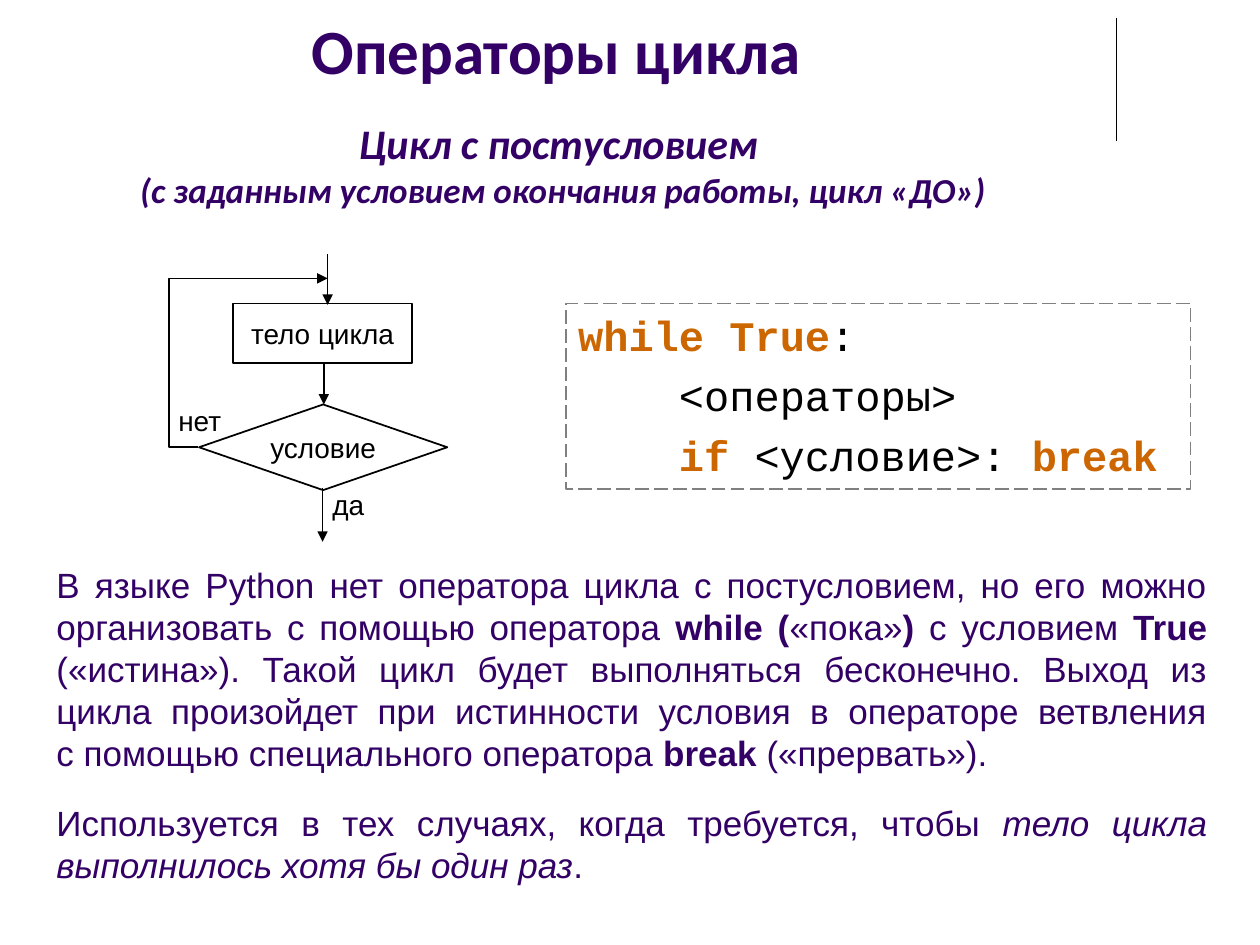
from lxml.etree import SubElement
from pptx import Presentation
from pptx.dml.color import RGBColor
from pptx.enum.dml import MSO_LINE
from pptx.enum.shapes import MSO_CONNECTOR, MSO_SHAPE
from pptx.enum.text import MSO_ANCHOR, PP_ALIGN
from pptx.oxml.ns import qn
from pptx.util import Inches, Pt

PURPLE = RGBColor(0x33, 0x00, 0x66)
ORANGE = RGBColor(0xCC, 0x66, 0x00)
GRAY = RGBColor(0x80, 0x80, 0x80)
BLACK = RGBColor(0, 0, 0)
WHITE = RGBColor(0xFF, 0xFF, 0xFF)

# A paragraph is a list of (text, format) spans.
BOLD, ITALIC = {"bold": True}, {"italic": True}
KEYWORD = {"bold": True, "color": ORANGE}

TITLE = [
    [("Операторы цикла ", {"size": 36})],
    [("Цикл с постусловием ", {"size": 24, "italic": True})],
    [("(с заданным условием окончания работы, цикл «ДО»)", {"size": 20, "italic": True})],
]
CODE = [
    [("while True", KEYWORD), (":", {})],
    [("    <операторы>", {})],
    [("    ", {}), ("if", KEYWORD), (" <условие>: ", {}), ("break", KEYWORD)],
]
EXPLANATION = [[
    ("В языке Python нет оператора цикла с постусловием, но его можно "
     "организовать с помощью оператора ", {}),
    ("while (", BOLD), ("«пока»", {}), (") ", BOLD), ("с условием ", {}), ("True", BOLD),
    (" («истина»). Такой цикл будет выполняться бесконечно. Выход из цикла "
     "произойдет при истинности условия в операторе ветвления\n"
     "с помощью специального оператора ", {}),
    ("break ", BOLD), ("(«прервать»).", {}),
]]
USAGE = [[
    ("Используется в тех случаях, когда требуется, чтобы ", {}),
    ("тело цикла выполнилось хотя бы один раз", ITALIC), (".", {}),
]]

# Flowchart: boxes as left, top, width, height; arrows as start and end points.
FLOW_BLOCKS = [
    ("условие", MSO_SHAPE.FLOWCHART_DECISION, (1.58, 3.21, 1.97, 0.68)),
    ("тело цикла", MSO_SHAPE.RECTANGLE, (1.85, 2.41, 1.42, 0.47)),
]
FLOW_LABELS = [("да", (2.48, 3.87, 0.57, 0.33)), ("нет", (1.3, 3.2, 0.57, 0.33))]
FLOW_ARROWS = [
    ((2.6, 2.02), (2.6, 2.42)),
    ((2.57, 2.88), (2.57, 3.21)),
    ((2.56, 3.87), (2.56, 4.3)),
]
LOOP_BACK = [(1.57, 3.55), (1.34, 3.55), (1.34, 2.21), (2.6, 2.21)]


def inches(values):
    return [Inches(value) for value in values]


def write(shape, paragraphs, *, font, size=None, color=BLACK, bold=False,
          align=PP_ALIGN.LEFT, anchor=MSO_ANCHOR.TOP, gaps=(), margins=(0.1, 0.05)):
    """Fill a shape with text; gaps are points before each paragraph after the first."""
    frame = shape.text_frame
    frame.word_wrap = True
    frame.vertical_anchor = anchor
    frame.margin_left = frame.margin_right = Inches(margins[0])
    frame.margin_top = frame.margin_bottom = Inches(margins[1])
    for index, spans in enumerate(paragraphs):
        para = frame.add_paragraph() if index else frame.paragraphs[0]
        para.alignment = align
        para.space_before = Pt(gaps[index - 1] if index else 0)
        for text, style in spans:
            for number, line in enumerate(text.split("\n")):
                if number:
                    para.add_line_break()
                span = para.add_run()
                span.text = line
                span.font.name = font
                span.font.size = Pt(style.get("size", size))
                span.font.bold = style.get("bold", bold)
                span.font.italic = style.get("italic", False)
                span.font.color.rgb = style.get("color", color)


def add_text(page, place, paragraphs, **text_format):
    write(page.shapes.add_textbox(*inches(place)), paragraphs, **text_format)


def outline(shape, color=BLACK, width=1, arrow=False):
    shape.line.color.rgb = color
    shape.line.width = Pt(width)
    if arrow:
        SubElement(shape.line._get_or_add_ln(), qn("a:tailEnd"), type="triangle")


def add_line(page, start, end, **line_format):
    line = page.shapes.add_connector(MSO_CONNECTOR.STRAIGHT, *inches(start + end))
    outline(line, **line_format)
    SubElement(line._element.spPr, qn("a:effectLst"))


def add_block(page, kind, place):
    block = page.shapes.add_shape(kind, *inches(place))
    block.shadow.inherit = False
    outline(block)
    block.fill.solid()
    block.fill.fore_color.rgb = WHITE
    return block


def add_flowchart(page):
    label_format = dict(font="Arial", size=16, align=PP_ALIGN.CENTER, margins=(0, 0))
    for text, kind, place in FLOW_BLOCKS:
        write(add_block(page, kind, place), [[(text, {})]],
              anchor=MSO_ANCHOR.MIDDLE, **label_format)
    for text, place in FLOW_LABELS:
        add_text(page, place, [[(text, {})]], **label_format)
    for start, end in FLOW_ARROWS:
        add_line(page, start, end, arrow=True)

    first, *others = [inches(point) for point in LOOP_BACK]
    builder = page.shapes.build_freeform(*first)
    builder.add_line_segments(others, close=False)
    loop = builder.convert_to_shape()
    loop.shadow.inherit = False
    loop.fill.background()
    outline(loop, arrow=True)


def main():
    deck = Presentation()
    deck.slide_width, deck.slide_height = inches((10, 7.5))
    page = deck.slides.add_slide(deck.slide_layouts[6])

    add_line(page, (8.86, 0.14), (8.86, 1.12), width=0.75)
    add_text(page, (0.12, 0, 8.7, 1.9), TITLE, font="Calibri", color=PURPLE, bold=True,
             align=PP_ALIGN.CENTER, gaps=(17.7, 0), margins=(0.1, 0.09))

    code_box = add_block(page, MSO_SHAPE.RECTANGLE, (4.49, 2.41, 4.96, 1.47))
    code_box.fill.background()
    outline(code_box, GRAY)
    code_box.line.dash_style = MSO_LINE.LONG_DASH
    write(code_box, CODE, font="Courier New", size=24, gaps=(5.3, 5.3))

    add_flowchart(page)

    for top, height, paragraphs in ((4.42, 1.78, EXPLANATION), (6.31, 0.77, USAGE)):
        add_text(page, (0.35, top, 9.33, height), paragraphs, font="Arial", size=20,
                 color=PURPLE, align=PP_ALIGN.JUSTIFY)

    deck.save("out.pptx")


if __name__ == "__main__":
    main()
